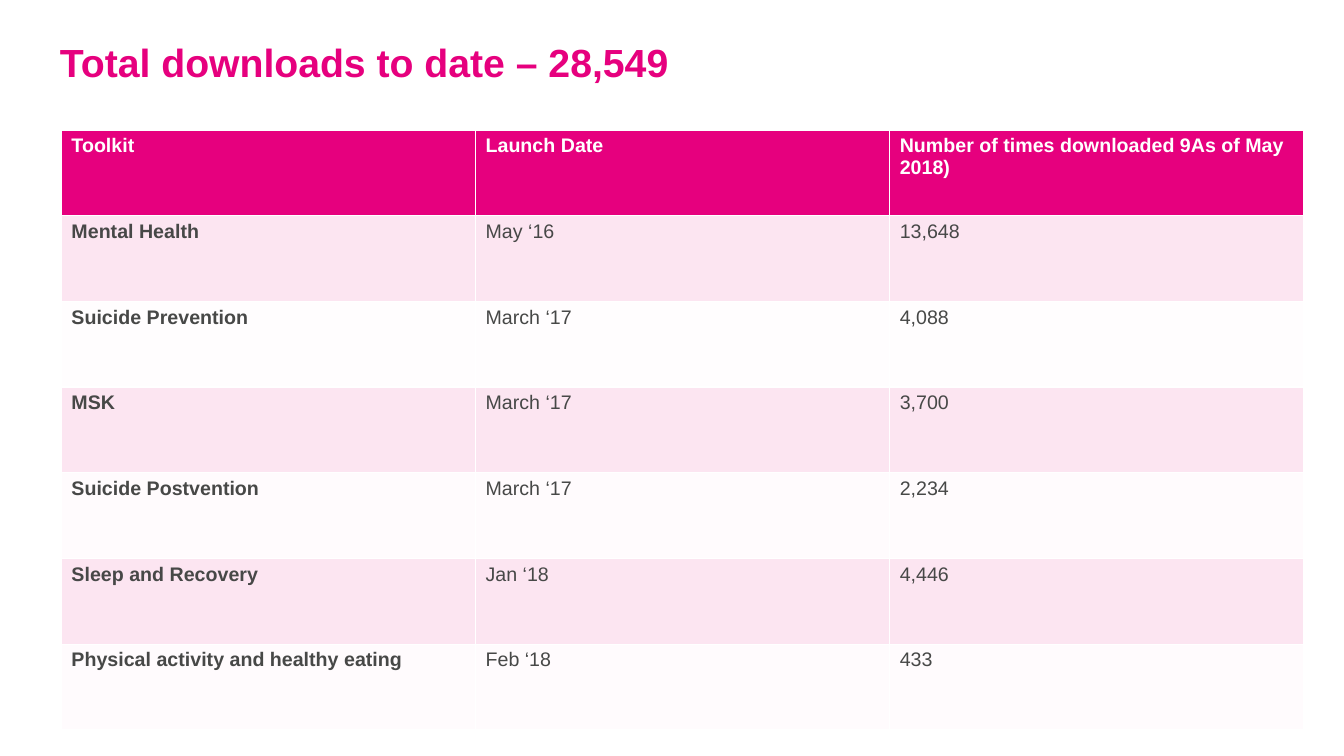
from lxml import etree
from pptx import Presentation, util as u
from pptx.dml.color import RGBColor
from pptx.enum import text
from pptx.oxml.ns import qn

MAGENTA, PALE_PINK, GREY, WHITE = "E6007E", "FFD9EE", "474847", "FFFFFF"
HEADINGS = ("Toolkit", "Launch Date", "Number of times downloaded 9As of May 2018)")
TOOLKITS = (
    ("Mental Health", "May ‘16", "13,648"),
    ("Suicide Prevention", "March ‘17", "4,088"),
    ("MSK", "March ‘17", "3,700"),
    ("Suicide Postvention", "March ‘17", "2,234"),
    ("Sleep and Recovery", "Jan ‘18", "4,446"),
    ("Physical activity and healthy eating", "Feb ‘18", "433"),
)
ROW_FILLS = (
    (MAGENTA, 100), (MAGENTA, 10), (PALE_PINK, 5), (MAGENTA, 10),
    (PALE_PINK, 10), (MAGENTA, 10), (PALE_PINK, 10),
)


def colour(value):
    return RGBColor.from_string(value)


def apply_format(target, values):
    for name, value in values.items():
        setattr(target, name, value)


class Deck:
    font_name = "Arial"

    def __init__(self, width, height):
        self.presentation = Presentation()
        apply_format(self.presentation,
                     {"slide_width": u.Inches(width), "slide_height": u.Inches(height)})
        self.slide = self.presentation.slides.add_slide(self.presentation.slide_layouts[6])

    def box(self, *percentages):
        across, down = self.presentation.slide_width, self.presentation.slide_height
        return [round(share * full / 100) for share, full in
                zip(percentages, (across, down, across, down))]

    def add_words(self, frame, words, size, ink, bold):
        paragraph = frame.paragraphs[0]
        run = paragraph.add_run()
        run.text = words
        apply_format(run.font, {"name": self.font_name, "size": u.Pt(size), "bold": bold})
        run.font.color.rgb = colour(ink)
        return paragraph

    def title(self, words, area):
        frame = self.slide.shapes.add_textbox(*self.box(*area)).text_frame
        apply_format(frame, {"margin_left": 0, "margin_top": 0, "margin_right": 0,
                             "margin_bottom": 0, "word_wrap": True,
                             "vertical_anchor": text.MSO_ANCHOR.TOP})
        self.add_words(frame, words, 28, MAGENTA, True).line_spacing = u.Pt(30)

    def fill(self, cell, value, opacity):
        cell.fill.solid()
        cell.fill.fore_color.rgb = colour(value)
        if opacity < 100:
            tone = next(cell._tc.tcPr.iter(qn("a:srgbClr")))
            etree.SubElement(tone, qn("a:alpha"), val=str(opacity * 1000))

    def table(self, rows, fills, area):
        table = self.slide.shapes.add_table(len(rows), len(rows[0]), *self.box(*area)).table
        for row, (words, row_fill) in enumerate(zip(rows, fills)):
            for column, entry in enumerate(words):
                cell = table.cell(row, column)
                self.fill(cell, *row_fill)
                self.add_words(cell.text_frame, entry, 14, GREY if row else WHITE,
                               row == 0 or column == 0)


def main():
    deck = Deck(13.33, 7.5)
    deck.title("Total downloads to date – 28,549", (4.46, 5.75, 90.5, 5.87))
    deck.table((HEADINGS, *TOOLKITS), ROW_FILLS, (4.57, 17.2, 92.45, 79.37))
    deck.presentation.save("out.pptx")


if __name__ == "__main__":
    main()
